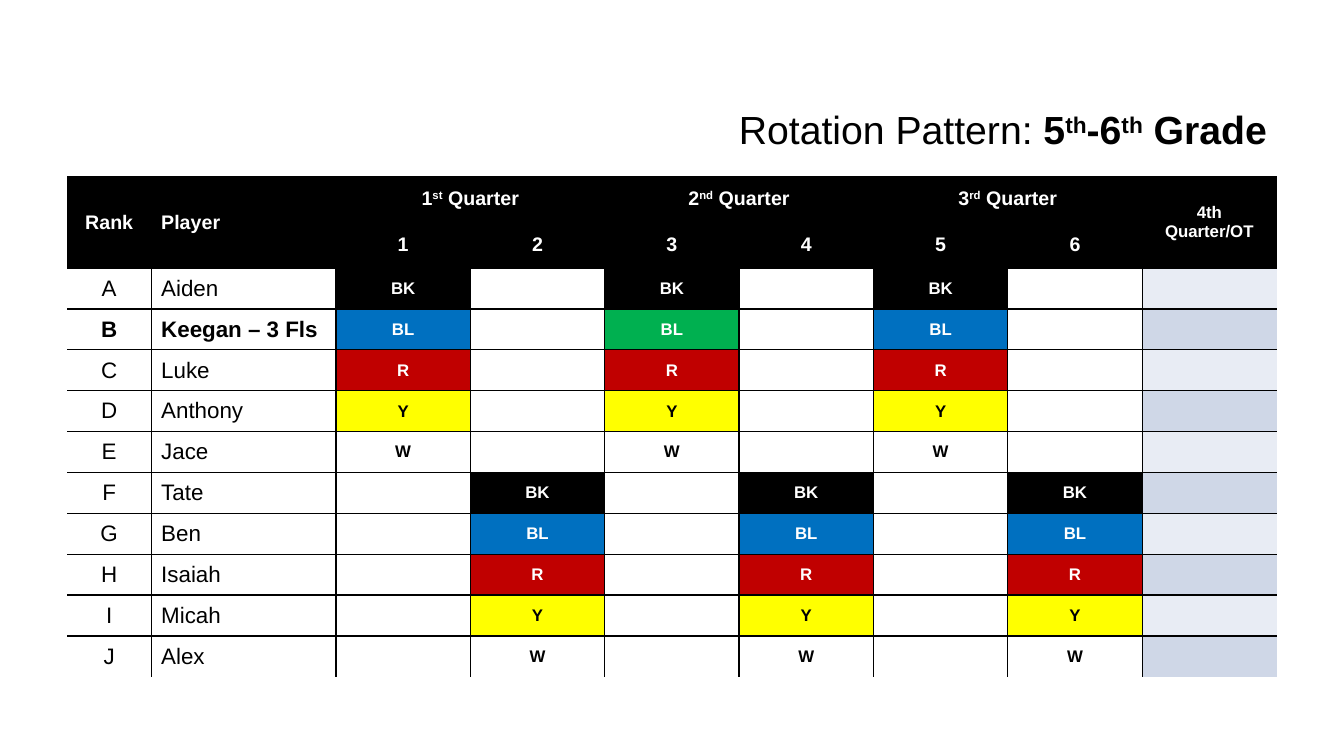
from lxml.etree import SubElement
from pptx import Presentation
from pptx.dml.color import RGBColor
from pptx.enum.text import MSO_ANCHOR, PP_ALIGN
from pptx.oxml.ns import qn
from pptx.util import Pt

BLACK = RGBColor(0x00, 0x00, 0x00)
WHITE = RGBColor(0xFF, 0xFF, 0xFF)
BLUE = RGBColor(0x00, 0x70, 0xC0)
GREEN = RGBColor(0x00, 0xB0, 0x50)
RED = RGBColor(0xC0, 0x00, 0x00)
YELLOW = RGBColor(0xFF, 0xFF, 0x00)
PALE_BAND = RGBColor(0xE8, 0xEC, 0xF4)
DEEP_BAND = RGBColor(0xCF, 0xD7, 0xE7)

PLAYERS = ["Aiden", "Keegan – 3 Fls", "Luke", "Anthony", "Jace",
           "Tate", "Ben", "Isaiah", "Micah", "Alex"]
TEAMS = [("BK", BLACK, WHITE), ("BL", BLUE, WHITE), ("R", RED, WHITE),
         ("Y", YELLOW, BLACK), ("W", WHITE, BLACK)]
QUARTERS = ["1^st^ Quarter", "2^nd^ Quarter", "3^rd^ Quarter"]
HIGHLIGHTED_PLAYER = 1
GREEN_TURN = (1, 2)
TURNS = 6
HEADER_ROWS = 2
FIRST_TURN_COLUMN = 2
LAST_COLUMN = FIRST_TURN_COLUMN + TURNS
COLUMN_WIDTHS = [60, 132] + [96] * (TURNS + 1)
ROW_HEIGHTS = [31.4] * HEADER_ROWS + [29.2] * len(PLAYERS)


def add_text(para, text, size=14, color=BLACK, bold=False, align=PP_ALIGN.CENTER):
    para.alignment = align
    for position, piece in enumerate(text.split("^")):
        span = para.add_run()
        span.text = piece
        span.font.name = "Arial"
        span.font.size = Pt(size)
        span.font.bold = bold
        span.font.color.rgb = color
        if position % 2:
            span.font._element.set("baseline", "30000")


def add_title(page, left, top, width, height):
    box = page.shapes.add_textbox(Pt(left), Pt(top), Pt(width), Pt(height))
    box.text_frame.word_wrap = True
    para = box.text_frame.paragraphs[0]
    add_text(para, "Rotation Pattern:", size=28, align=PP_ALIGN.RIGHT)
    add_text(para, " 5^th^-6^th^ Grade", size=28, bold=True, align=PP_ALIGN.RIGHT)


def style_cell(cell, fill, inner_edges):
    properties = cell._tc.get_or_add_tcPr()
    for edge, is_inner in inner_edges.items():
        line = SubElement(properties, qn(f"a:{edge}"), w=str(Pt(1)))
        if is_inner:
            paint = SubElement(line, qn("a:solidFill"))
            SubElement(paint, qn("a:srgbClr"), val=str(BLACK))
        else:
            SubElement(line, qn("a:noFill"))
    cell.fill.solid()
    cell.fill.fore_color.rgb = fill
    cell.vertical_anchor = MSO_ANCHOR.MIDDLE


def base_fill(row, column):
    if row < HEADER_ROWS:
        return BLACK
    if column == LAST_COLUMN:
        return DEEP_BAND if row % 2 else PALE_BAND
    return WHITE


def fill_header(table):
    def heading(row, column, text, **text_format):
        para = table.cell(row, column).text_frame.paragraphs[0]
        add_text(para, text, color=WHITE, bold=True, **text_format)

    for column in (0, 1, LAST_COLUMN):
        table.cell(0, column).merge(table.cell(1, column))
    heading(0, 0, "Rank")
    heading(0, 1, "Player", align=PP_ALIGN.LEFT)
    heading(0, LAST_COLUMN, "4th Quarter/OT", size=12)
    for index, quarter in enumerate(QUARTERS):
        column = FIRST_TURN_COLUMN + 2 * index
        table.cell(0, column).merge(table.cell(0, column + 1))
        heading(0, column, quarter)
    for turn in range(TURNS):
        heading(1, FIRST_TURN_COLUMN + turn, str(turn + 1))


def fill_players(table):
    for index, player in enumerate(PLAYERS):
        row = HEADER_ROWS + index
        bold = index == HIGHLIGHTED_PLAYER
        add_text(table.cell(row, 0).text_frame.paragraphs[0], "ABCDEFGHIJ"[index],
                 size=16, bold=bold)
        add_text(table.cell(row, 1).text_frame.paragraphs[0], player,
                 size=16, bold=bold, align=PP_ALIGN.LEFT)
        group, place = divmod(index, len(TEAMS))
        code, fill, color = TEAMS[place]
        for turn in range(group, TURNS, 2):
            cell = table.cell(row, FIRST_TURN_COLUMN + turn)
            cell.fill.fore_color.rgb = GREEN if (index, turn) == GREEN_TURN else fill
            add_text(cell.text_frame.paragraphs[0], code, size=12, color=color, bold=True)


def add_rotation_table(page, left, top, width, height):
    rows, columns = len(ROW_HEIGHTS), len(COLUMN_WIDTHS)
    table = page.shapes.add_table(rows, columns, Pt(left), Pt(top),
                                  Pt(width), Pt(height)).table
    for column, column_width in zip(table.columns, COLUMN_WIDTHS):
        column.width = Pt(column_width)
    for row, row_height in zip(table.rows, ROW_HEIGHTS):
        row.height = Pt(row_height)
    for row in range(rows):
        for column in range(columns):
            inner_edges = {"lnL": column > 0, "lnR": column < columns - 1,
                           "lnT": row > 0, "lnB": row < rows - 1}
            style_cell(table.cell(row, column), base_fill(row, column), inner_edges)
    fill_header(table)
    fill_players(table)


def main():
    deck = Presentation()
    deck.slide_width, deck.slide_height = Pt(960), Pt(540)
    page = deck.slides.add_slide(deck.slide_layouts[6])
    add_rotation_table(page, 48, 126, sum(COLUMN_WIDTHS), sum(ROW_HEIGHTS))
    add_title(page, 282, 72, 630, 41.2)
    deck.save("out.pptx")


if __name__ == "__main__":
    main()
